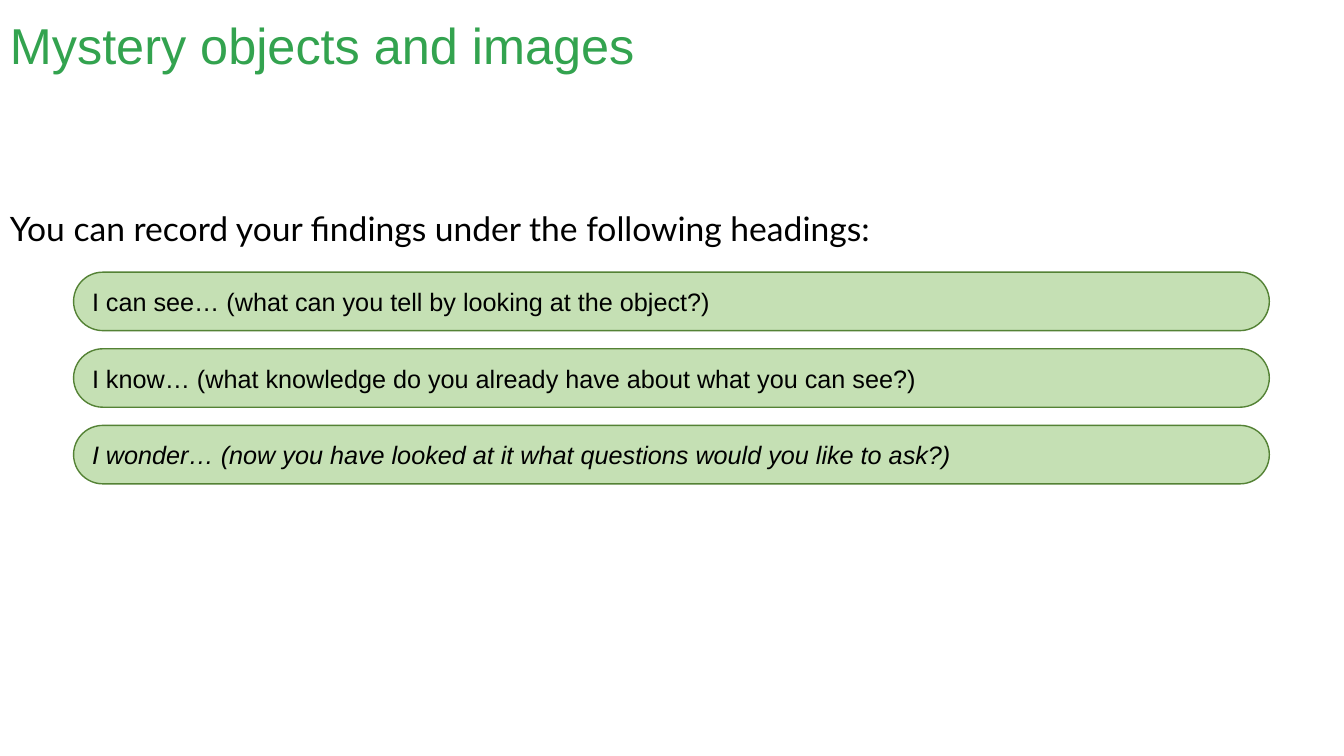
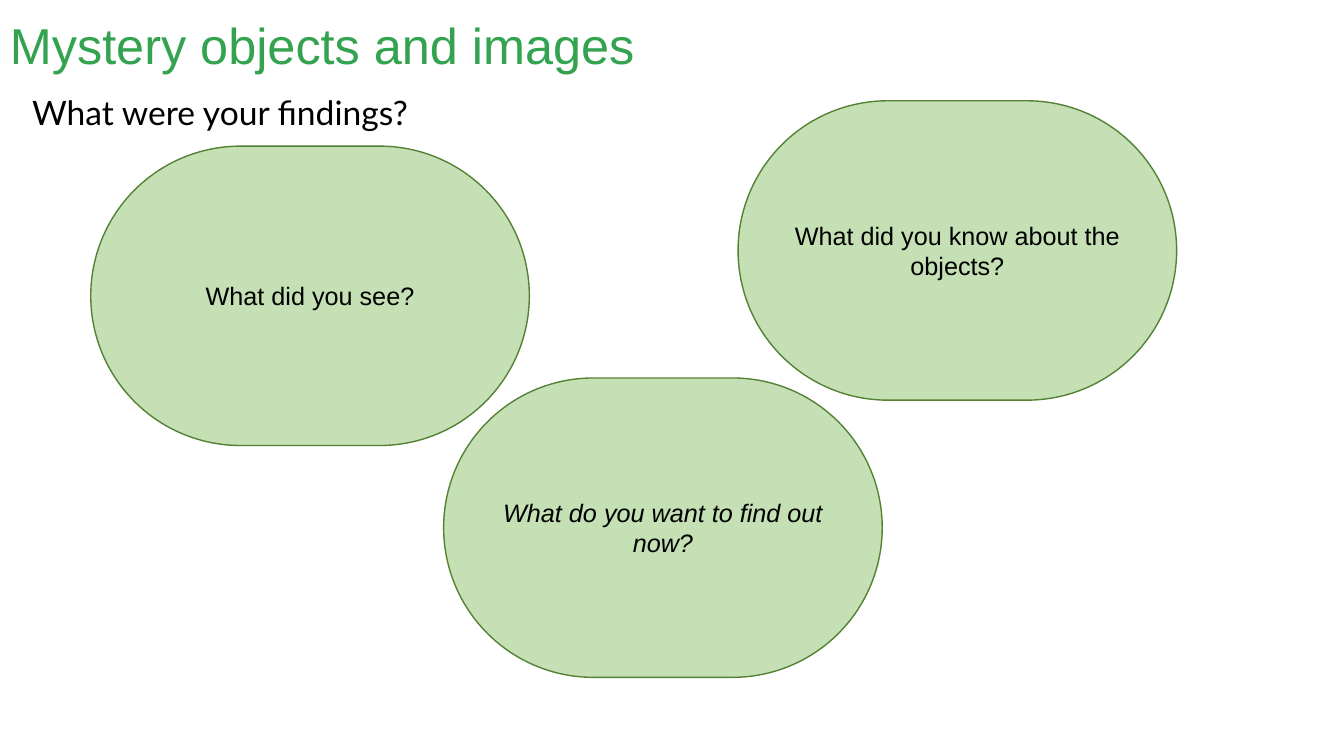
from pptx import Presentation
from pptx.dml.color import RGBColor
from pptx.enum.shapes import MSO_SHAPE
from pptx.enum.text import MSO_ANCHOR, PP_ALIGN
from pptx.util import Inches, Pt

TITLE_GREEN = RGBColor(0x33, 0xA3, 0x4F)
PALE_GREEN = RGBColor(0xC5, 0xE0, 0xB4)
DARK_GREEN = RGBColor(0x54, 0x82, 0x35)
BLACK = RGBColor(0, 0, 0)

SLIDE_W, SLIDE_H = 13.33, 7.5
TITLE = "Mystery objects and images"

HEADINGS_LEAD = "You can record your findings under the following headings:"
HEADINGS = [
    ("I can see… (what can you tell by looking at the object?)", False),
    ("I know… (what knowledge do you already have about what you can see?)", False),
    ("I wonder… (now you have looked at it what questions would you like to ask?)", True),
]
BAR_LEFT, BAR_TOP, BAR_W, BAR_H, BAR_GAP = 0.73, 2.7, 11.86, 0.58, 0.18

FINDINGS_LEAD = "What were your findings?"
FINDINGS = [
    ("What did you see?", False, 0.9, 1.45),
    ("What did you know about the objects?", False, 7.32, 1),
    ("What do you want to find out now?", True, 4.4, 3.75),
]
BUBBLE_W, BUBBLE_H = 4.35, 2.97


def style_text(tf, text, font, size, color, align=PP_ALIGN.LEFT, italic=False):
    tf.word_wrap = True
    tf.text = text
    p = tf.paragraphs[0]
    p.alignment = align
    r = p.runs[0]
    r.font.name = font
    r.font.size = Pt(size)
    r.font.color.rgb = color
    r.font.italic = italic


def add_text(s, box, text, font, size, color):
    tb = s.shapes.add_textbox(*map(Inches, box))
    style_text(tb.text_frame, text, font, size, color)


def add_pill(s, box, text, italic, align):
    sp = s.shapes.add_shape(MSO_SHAPE.ROUNDED_RECTANGLE, *map(Inches, box))
    sp.adjustments[0] = 0.5
    sp.shadow.inherit = False
    sp.fill.solid()
    sp.fill.fore_color.rgb = PALE_GREEN
    sp.line.color.rgb = DARK_GREEN
    sp.line.width = Pt(1)
    sp.text_frame.vertical_anchor = MSO_ANCHOR.MIDDLE
    style_text(sp.text_frame, text, "Arial", 18, BLACK, align, italic)


def add_slide(prs, lead, left, top):
    s = prs.slides.add_slide(prs.slide_layouts[6])
    add_text(s, (0, 0.09, 12.11, 0.7), TITLE, "Arial", 36, TITLE_GREEN)
    add_text(s, (left, top, SLIDE_W - left, 0.5), lead, "Lato", 24, BLACK)
    return s


def main():
    prs = Presentation()
    prs.slide_width, prs.slide_height = Inches(SLIDE_W), Inches(SLIDE_H)

    s = add_slide(prs, HEADINGS_LEAD, 0, 2.01)
    for i, (text, italic) in enumerate(HEADINGS):
        top = BAR_TOP + i * (BAR_H + BAR_GAP)
        add_pill(s, (BAR_LEFT, top, BAR_W, BAR_H), text, italic, PP_ALIGN.LEFT)

    s = add_slide(prs, FINDINGS_LEAD, 0.22, 0.86)
    for text, italic, left, top in FINDINGS:
        add_pill(s, (left, top, BUBBLE_W, BUBBLE_H), text, italic, PP_ALIGN.CENTER)

    prs.save("out.pptx")


if __name__ == "__main__":
    main()
